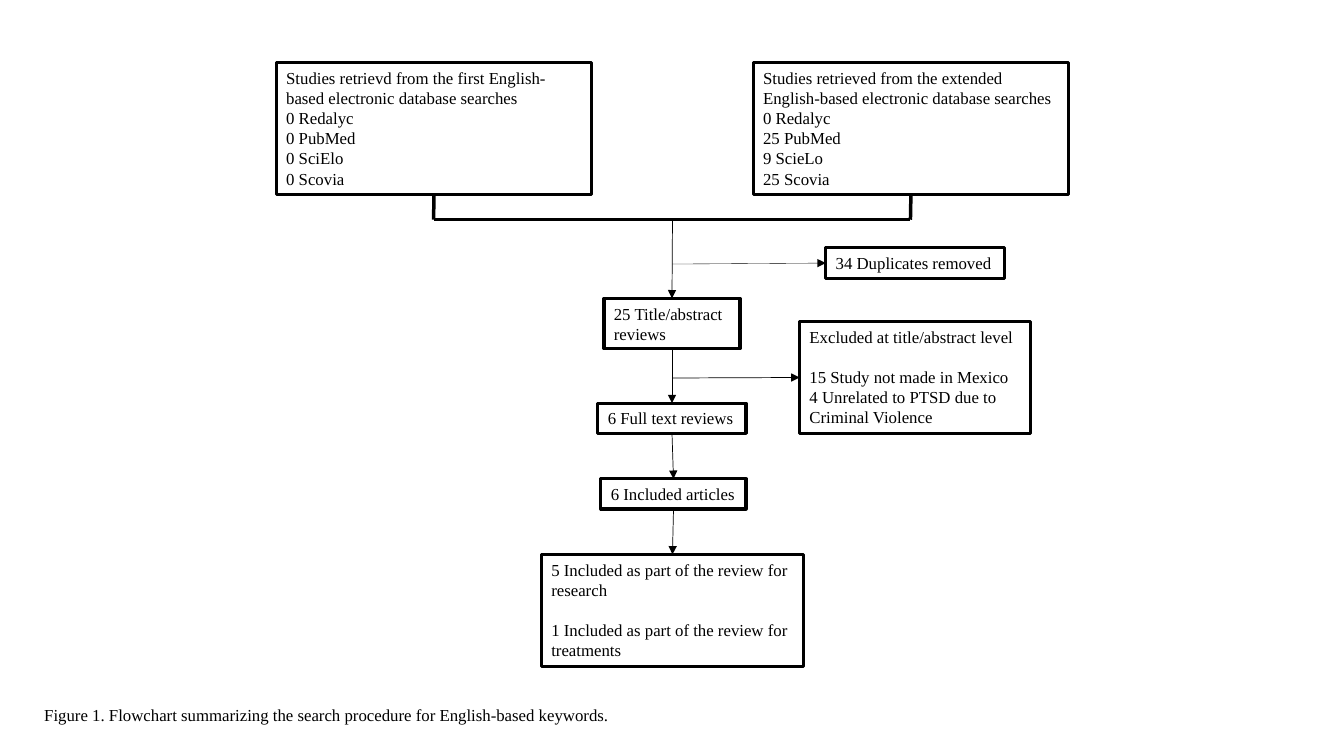
from lxml import etree
from pptx import Presentation
from pptx.dml.color import RGBColor
from pptx.enum import shapes, text
from pptx.oxml import ns
from pptx.util import Inches, Pt

COLORS = {"ink": "000000"}
FONT = "Times New Roman"
TOP, LEFT, BOTTOM = 0, 1, 2  # connection sites of a rectangle
CENTER_X, MERGE_Y = 6.67, 2.18


def ink():
    return RGBColor.from_string(COLORS["ink"])


def add_text(frame, paragraphs, size=12, gap_before=None, wrap=True):
    """Write paragraphs; gap_before is the index of one set off by a blank line's height."""
    frame.word_wrap = wrap
    frame.auto_size = text.MSO_AUTO_SIZE.SHAPE_TO_FIT_TEXT
    frame.vertical_anchor = text.MSO_ANCHOR.TOP
    for index, content in enumerate(paragraphs):
        paragraph = frame.paragraphs[0] if index == 0 else frame.add_paragraph()
        paragraph.alignment = text.PP_ALIGN.LEFT
        if index == gap_before:
            paragraph.space_before = Pt(14)
        run = paragraph.add_run()
        run.text = content
        run.font.name = FONT
        run.font.size = Pt(size)
        run.font.color.rgb = ink()


def add_box(slide, left, top, width, height, paragraphs, border=2.25, **text_format):
    box = slide.shapes.add_textbox(*map(Inches, (left, top, width, height)))
    if border:
        box.line.color.rgb = ink()
        box.line.width = Pt(border)
    add_text(box.text_frame, paragraphs, **text_format)
    return box


def add_line(slide, start, end, width=0.5, arrow=True):
    """Join two ends, each a point in inches or a (box, site) pair."""
    line = slide.shapes.add_connector(shapes.MSO_CONNECTOR.STRAIGHT, 0, 0, 0, 0)
    if isinstance(start[0], (int, float)):
        line.begin_x, line.begin_y = map(Inches, start)
    else:
        line.begin_connect(*start)
    if isinstance(end[0], (int, float)):
        line.end_x, line.end_y = map(Inches, end)
    else:
        line.end_connect(*end)
    line.line.color.rgb = ink()
    line.line.width = Pt(width)
    if arrow:
        outline = line.line._get_or_add_ln()
        etree.SubElement(outline, ns.qn("a:tailEnd"), type="triangle")
    etree.SubElement(line._element.spPr, ns.qn("a:effectLst"))


def main():
    presentation = Presentation()
    presentation.slide_width = Inches(13.33)
    presentation.slide_height = Inches(7.5)
    slide = presentation.slides.add_slide(presentation.slide_layouts[6])

    # Database searches
    first_search = add_box(slide, 2.74, 0.62, 3.13, 1.31, [
        "Studies retrievd from the first English-based electronic database searches",
        "0 Redalyc", "0 PubMed", "0 SciElo", "0 Scovia"])
    extended_search = add_box(slide, 7.47, 0.62, 3.13, 1.31, [
        "Studies retrieved from the extended English-based electronic database searches",
        "0 Redalyc", "25 PubMed", "9 ScieLo", "25 Scovia"])

    # Review stages
    abstracts = add_box(slide, 5.99, 2.96, 1.35, 0.5, ["25 Title/abstract reviews"])
    full_texts = add_box(slide, 5.93, 4, 1.47, 0.3, ["6 Full text reviews"], wrap=False)
    included = add_box(slide, 5.96, 4.75, 1.44, 0.3, ["6 Included articles"], wrap=False)
    outcome = add_box(slide, 5.37, 5.5, 2.6, 1.11, [
        "5 Included as part of the review for research",
        "1 Included as part of the review for treatments"], gap_before=1)

    # Removed studies
    duplicates = add_box(slide, 8.19, 2.46, 1.77, 0.3, ["34 Duplicates removed"], wrap=False)
    excluded = add_box(slide, 7.93, 3.19, 2.29, 1.11, [
        "Excluded at title/abstract level", "15 Study not made in Mexico",
        "4 Unrelated to PTSD due to Criminal Violence"], gap_before=1)

    # Bracket merging the searches
    bracket_ends = [(4.3, MERGE_Y), (9.03, MERGE_Y)]
    for search, corner in zip((first_search, extended_search), bracket_ends):
        add_line(slide, (search, BOTTOM), corner, width=2.5, arrow=False)
    add_line(slide, *bracket_ends, width=2.5, arrow=False)

    # Flow down the stages
    add_line(slide, (CENTER_X, MERGE_Y), (abstracts, TOP))
    stages = [abstracts, full_texts, included, outcome]
    for upper, lower in zip(stages, stages[1:]):
        add_line(slide, (upper, BOTTOM), (lower, TOP))

    # Branches to the removed studies
    add_line(slide, (CENTER_X, 2.62), (duplicates, LEFT), width=0.25)
    add_line(slide, (CENTER_X, 3.75), (excluded, LEFT))

    # Caption
    add_box(slide, 0.34, 6.94, 5.85, 0.3, [
        "Figure 1. Flowchart summarizing the search procedure for English-based keywords."],
        border=None, wrap=False)

    presentation.save("out.pptx")


if __name__ == "__main__":
    main()
